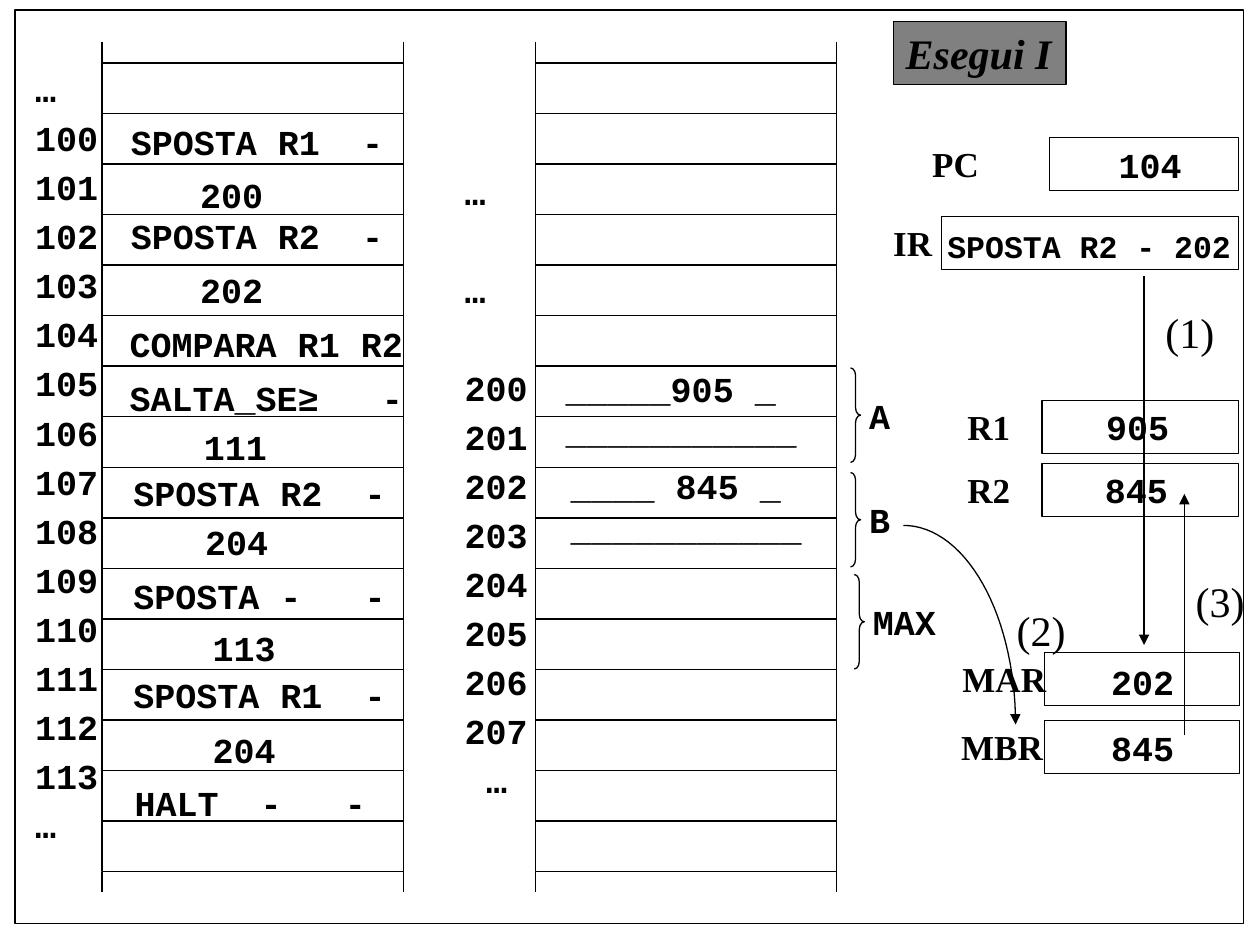
import math
from dataclasses import dataclass

from lxml import etree
from pptx import Presentation
from pptx.dml.color import RGBColor
from pptx.enum.shapes import MSO_CONNECTOR, MSO_SHAPE
from pptx.enum.text import MSO_ANCHOR, MSO_AUTO_SIZE, PP_ALIGN
from pptx.oxml.ns import qn
from pptx.util import Inches, Pt

RECTANGLE = MSO_SHAPE.RECTANGLE
RIGHT_BRACE = MSO_SHAPE.RIGHT_BRACE
STRAIGHT = MSO_CONNECTOR.STRAIGHT
FIT_TEXT = MSO_AUTO_SIZE.SHAPE_TO_FIT_TEXT
TOP, LEFT = MSO_ANCHOR.TOP, PP_ALIGN.LEFT
COLORS = {"ink": "000000", "paper": "FFFFFF", "title": "808080"}
MONO, SERIF = "Courier New", "Times New Roman"

ROWS, ROW_TOP, ROW_PITCH = 16, 0.5, 6.42 / 16
CELL_WIDTH, CELL_HEIGHT = 2.39, 0.4
LABEL_GAP = 4  # points between address labels
LABEL_PITCH = 28  # points from one address label to the next


@dataclass
class Style:
    font: str = MONO
    size: float = 20
    bold: bool = True
    italic: bool = False


@dataclass
class Register:
    name: str
    name_left: float
    name_width: float
    left: float
    top: float
    width: float
    value: str
    value_left: float
    value_drop: float = 0
    value_size: float = 20


@dataclass
class Variable:
    name: str
    left: float
    top: float


CODE, NAME, STEP = Style(), Style(SERIF), Style(SERIF, 24, False)
BLANK_LINE = Style(bold=False)
TITLE = Style(SERIF, 24, True, True)

REGISTERS = [
    Register("PC", 7.3, 0.57, 8.33, 1.09, 1.5, "104", 8.78),
    Register("IR", 6.99, 0.51, 7.47, 1.72, 2.36, "SPOSTA R2 - 202", 7.42, 0.03, 18),
    Register("R1", 7.58, 0.54, 8.27, 3.18, 1.56, "905", 8.68, -0.01),
    Register("R2", 7.58, 0.54, 8.27, 3.68, 1.56, "845", 8.67, -0.01),
    Register("MAR", 7.54, 0.87, 8.29, 5.18, 1.55, "202", 8.72, 0.01),
    Register("MBR", 7.53, 0.85, 8.29, 5.72, 1.55, "845", 8.72),
]
VARIABLES = [Variable("A", 6.75, 2.92), Variable("B", 6.75, 3.75),
             Variable("MAX", 6.78, 4.56)]
# Instruction text with its left and top
PROGRAM = [
    ("SPOSTA R1  -", 0.94, 0.91), ("200", 1.49, 1.33),
    ("SPOSTA R2  -", 0.94, 1.65), ("202", 1.49, 2.08),
    ("COMPARA R1 R2", 0.93, 2.51), ("SALTA_SE≥   -", 0.93, 2.94),
    ("111", 1.52, 3.33), ("SPOSTA R2  -", 0.96, 3.69),
    ("204", 1.53, 4.08), ("SPOSTA -   -", 0.96, 4.51),
    ("113", 1.59, 4.92), ("SPOSTA R1  -", 0.96, 5.3),
    ("204", 1.59, 5.73), ("HALT  -   -", 0.97, 6.15),
]


def color(name: str) -> RGBColor:
    return RGBColor.from_string(COLORS[name])


def mono_width(text: str, size: float = 20) -> float:
    """Text width with both side margins and a little slack against wrapping."""
    return len(text) * size * 0.6 / 72 + 0.24


def add_span(para, text: str, style: Style) -> None:
    span = para.add_run()
    span.text = text
    font = span.font
    font.name, font.size = style.font, Pt(style.size)
    font.bold, font.italic = style.bold, style.italic
    font.color.rgb = color("ink")


def add_text(page, left: float, top: float, width: float, height: float,
             lines: list[list[tuple[str, Style]]]):
    box = page.shapes.add_textbox(Inches(left), Inches(top), Inches(width), Inches(height))
    frame = box.text_frame
    frame.word_wrap = False
    frame.auto_size = FIT_TEXT
    for index, line in enumerate(lines):
        para = frame.add_paragraph() if index else frame.paragraphs[0]
        for text, style in line:
            add_span(para, text, style)
    return box


def add_code(page, text: str, left: float, top: float, size: float = 20) -> None:
    add_text(page, left, top, mono_width(text, size), 0.43, [[(text, Style(size=size))]])


def set_outline(shape) -> None:
    shape.line.color.rgb = color("ink")
    shape.line.width = Pt(0.75)


def add_outline(page, kind, left: float, top: float, width: float, height: float,
                fill: str = ""):
    shape = page.shapes.add_shape(kind, Inches(left), Inches(top), Inches(width), Inches(height))
    shape.shadow.inherit = False
    if fill:
        shape.fill.solid()
        shape.fill.fore_color.rgb = color(fill)
    else:
        shape.fill.background()
    set_outline(shape)
    return shape


def add_arrowhead(shape) -> None:
    line = shape._element.spPr.find(qn("a:ln"))
    etree.SubElement(line, qn("a:tailEnd"), type="triangle")


def add_line(page, x1: float, y1: float, x2: float, y2: float, arrow: bool = False) -> None:
    line = page.shapes.add_connector(STRAIGHT, Inches(x1), Inches(y1), Inches(x2), Inches(y2))
    set_outline(line)
    if arrow:
        add_arrowhead(line)
    etree.SubElement(line._element.spPr, qn("a:effectLst"))


def add_memory(page, left: float) -> None:
    for row in range(ROWS):
        add_outline(page, RECTANGLE, left, ROW_TOP + row * ROW_PITCH, CELL_WIDTH, CELL_HEIGHT)
    right = left + CELL_WIDTH
    for x, top, bottom in ((left, 0.5, 6.92), (right, 0.58, 6.83)):
        add_line(page, x, top, x, 0.33)
        add_line(page, x, bottom, x, 7.08)


def add_addresses(page, left: float, top: float, height: float, labels: list[str]):
    box = add_text(page, left, top, mono_width("000"), height,
                   [[(label, CODE)] for label in labels])
    for para in box.text_frame.paragraphs[1:]:
        para.space_before = Pt(LABEL_GAP)
    return box.text_frame.paragraphs


def add_register(page, register: Register) -> None:
    add_outline(page, RECTANGLE, register.left, register.top, register.width, 0.42)
    add_text(page, register.name_left, register.top - 0.01, register.name_width, 0.43,
             [[(register.name, NAME)]])
    add_code(page, register.value, register.value_left,
             register.top + register.value_drop, register.value_size)


def add_variable(page, variable: Variable) -> None:
    brace = add_outline(page, RIGHT_BRACE, variable.left, variable.top, 0.08, 0.75)
    brace.adjustments[0], brace.adjustments[1] = 0.75, 0.5
    add_code(page, variable.name, variable.left + 0.05, variable.top + 0.16)


def add_quarter_arc(page, left: float, top: float, width: float, height: float) -> None:
    steps = 30
    angles = [math.pi / 2 * step / steps for step in range(1, steps + 1)]
    points = [(Inches(left + width * math.sin(angle)),
               Inches(top + height * (1 - math.cos(angle)))) for angle in angles]
    builder = page.shapes.build_freeform(Inches(left), Inches(top))
    builder.add_line_segments(points, close=False)
    arc = builder.convert_to_shape()
    arc.shadow.inherit = False
    arc.fill.background()
    set_outline(arc)
    add_arrowhead(arc)


def main() -> None:
    deck = Presentation()
    deck.slide_width, deck.slide_height = Inches(10), Inches(7.5)
    page = deck.slides.add_slide(deck.slide_layouts[6])
    add_outline(page, RECTANGLE, 0.12, 0.08, 9.75, 7.25, "paper")

    # Program memory
    add_memory(page, 0.81)
    add_addresses(page, 0.18, 0.49, 6.9, ["…", *map(str, range(100, 114)), "…"])
    for text, left, top in PROGRAM:
        add_code(page, text, left, top)

    # Data memory
    add_memory(page, 4.25)
    labels = add_addresses(page, 3.59, 1.3, 5.62, ["…", "…", *map(str, range(200, 208)), "…"])
    for para in labels[1:3]:
        para.space_before = Pt(LABEL_GAP + LABEL_PITCH)
    labels[-1]._p.get_or_add_pPr().set("marL", str(Inches(0.17)))
    rule = "_" * 11
    for left, top, spans in (
        (4.39, 2.87, [("_____", BLANK_LINE), ("905 ", CODE), ("_", BLANK_LINE)]),
        (4.43, 3.64, [("____ ", BLANK_LINE), ("845", CODE), (" _", BLANK_LINE)]),
    ):
        add_text(page, left, top, mono_width(rule), 0.77, [spans, [(rule, BLANK_LINE)]])
    for variable in VARIABLES:
        add_variable(page, variable)

    # Processor registers
    for register in REGISTERS:
        add_register(page, register)

    # Numbered steps
    add_line(page, 9.08, 2.19, 9.08, 5.12, arrow=True)
    add_quarter_arc(page, 7.17, 4.17, 0.89, 1.58)
    add_line(page, 9.4, 5.83, 9.4, 3.92, arrow=True)
    for text, left, top in (("(1)", 9.15, 2.38), ("(2)", 7.97, 4.75), ("(3)", 9.39, 4.52)):
        add_text(page, left, top, 0.59, 0.5, [[(text, STEP)]])

    # Title
    title = add_outline(page, RECTANGLE, 7.09, 0.17, 1.37, 0.5, "title")
    title.text_frame.word_wrap = False
    title.text_frame.vertical_anchor = TOP
    para = title.text_frame.paragraphs[0]
    para.alignment = LEFT
    add_span(para, "Esegui I", TITLE)

    deck.save("out.pptx")


if __name__ == "__main__":
    main()
